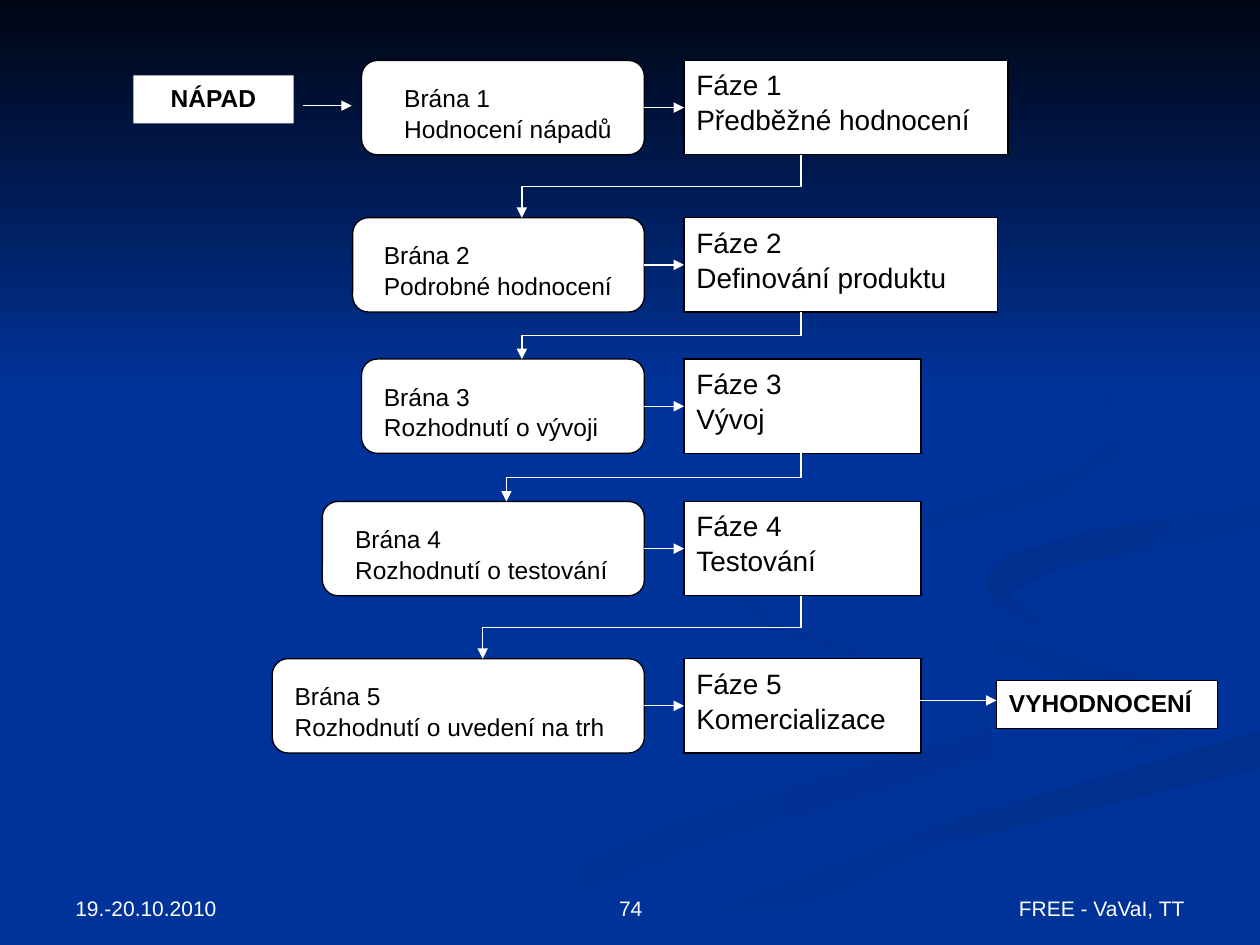
import pptx
import pptx.util
import pptx.dml.color
import pptx.enum.shapes
import pptx.enum.text
import pptx.oxml
import pptx.oxml.ns

Cm = pptx.util.Cm
Pt = pptx.util.Pt
SHAPES = pptx.enum.shapes.MSO_SHAPE
CONNECTORS = pptx.enum.shapes.MSO_CONNECTOR
ALIGN = pptx.enum.text.PP_ALIGN
ANCHOR = pptx.enum.text.MSO_ANCHOR

COLOURS = {
    "background": "003399", "night": "000514", "white": "FFFFFF", "black": "000000",
    "faint": "003193", "shade": "002F8C",
}

# Lengths are centimetres: row top, gate left, label left, phase width, entry x, gate, phase
STAGES = [
    (1.22, 7.29, 7.9, 6.53, None, "Hodnocení nápadů", "Předběžné hodnocení"),
    (4.39, 7.11, 7.49, 6.32, 10.52, "Podrobné hodnocení", "Definování produktu"),
    (7.24, 7.29, 7.49, 4.78, 10.52, "Rozhodnutí o vývoji", "Vývoj"),
    (10.11, 6.5, 6.91, 4.78, 10.21, "Rozhodnutí o testování", "Testování"),
    (13.28, 5.49, 5.69, 4.78, 9.73, "Rozhodnutí o uvedení na trh", "Komercializace"),
]
ROW_HEIGHT = 1.9
GATE_RIGHT = 12.99
LABEL_RIGHT = 12.83
PHASE_LEFT = 13.79
PHASE_EXIT = 16.15

FOOTER = [
    ("19.-20.10.2010", 1.27, 5.92, ALIGN.LEFT),
    ("74", 8.69, 8.05, ALIGN.CENTER),
    ("FREE - VaVaI, TT", 18.21, 5.92, ALIGN.RIGHT),
]

# Background ribbons: first colour, last colour, clockwise angle, outline on a 100 x 75 grid
GRID = Cm(0.254)
RIBBONS = [
    ("background", "faint", 0, [
        (57, 46), (60, 49), (78, 55), (78, 58), (54, 65), (30, 75), (36, 75),
        (56, 67), (79, 60), (78, 55), (61, 50)]),
    ("background", "faint", 45, [
        (72, 46), (75, 50), (92, 57), (89, 60), (94, 58), (92, 54), (75, 49)]),
    ("shade", "background", 90, [
        (50, 75), (57, 75), (75, 67), (100, 61), (100, 58), (76, 65), (57, 72)]),
    ("shade", "background", 45, [
        (78, 46), (79, 48), (83, 50), (80, 47), (84, 45), (100, 42), (100, 40),
        (87, 42), (80, 44)]),
    ("shade", "background", 45, [
        (68, 43), (83, 40), (89, 36), (88, 31), (76, 23), (85, 28), (89, 34), (86, 37),
        (76, 40), (60, 44), (58, 47), (62, 50), (59, 47), (62, 44)]),
    ("night", "background", 90, [(0, 0), (0, 30.8), (100, 30.8), (100, 0)]),
]


def rgb(name):
    return pptx.dml.color.RGBColor.from_string(COLOURS[name])


def write_text(frame, lines, size, colour="black", bold=False, align=ALIGN.LEFT,
               anchor=ANCHOR.TOP, spacing=1.04):
    frame.word_wrap = True
    frame.vertical_anchor = anchor
    for index, line in enumerate(lines):
        paragraph = frame.add_paragraph() if index else frame.paragraphs[0]
        paragraph.alignment = align
        paragraph.line_spacing = spacing
        run = paragraph.add_run()
        run.text = line
        run.font.name = "Arial"
        run.font.size = Pt(size)
        run.font.bold = bold
        run.font.color.rgb = rgb(colour)


def add_box(slide, left, top, width, height, kind=SHAPES.RECTANGLE, outlined=True):
    shape = slide.shapes.add_shape(kind, Cm(left), Cm(top), Cm(width), Cm(height))
    shape.shadow.inherit = False
    shape.fill.solid()
    shape.fill.fore_color.rgb = rgb("white")
    if outlined:
        shape.line.color.rgb = rgb("black")
        shape.line.width = Pt(0.75)
    else:
        shape.line.fill.background()
    return shape


def add_arrow(slide, x1, y1, x2, y2, kind=CONNECTORS.STRAIGHT):
    connector = slide.shapes.add_connector(kind, Cm(x1), Cm(y1), Cm(x2), Cm(y2))
    connector.line.color.rgb = rgb("white")
    connector.line.width = Pt(0.75)
    namespace = pptx.oxml.ns.nsdecls("a")
    connector.line._get_or_add_ln().append(
        pptx.oxml.parse_xml(f'<a:tailEnd {namespace} type="triangle"/>'))
    connector._element.spPr.append(pptx.oxml.parse_xml(f"<a:effectLst {namespace}/>"))
    return connector


def add_return_arrow(slide, x1, y1, x2, y2):
    """Elbow that leaves downwards: a sideways elbow turned a quarter about its centre."""
    middle_x, middle_y = (x1 + x2) / 2, (y1 + y2) / 2
    half_width, half_height = (y2 - y1) / 2, (x1 - x2) / 2
    connector = add_arrow(slide, middle_x - half_width, middle_y - half_height,
                          middle_x + half_width, middle_y + half_height, CONNECTORS.ELBOW)
    connector.rotation = 90


def add_ribbon(slide, first, last, angle, points):
    builder = slide.shapes.build_freeform(*points[0], scale=GRID)
    builder.add_line_segments(points[1:], close=True)
    shape = builder.convert_to_shape()
    shape.shadow.inherit = False
    shape.line.fill.background()
    shape.fill.gradient()
    shape.fill.gradient_angle = (360 - angle) % 360
    for stop, colour in zip(shape.fill.gradient_stops, (first, last)):
        stop.color.rgb = rgb(colour)


def add_stage(slide, number, top, gate_left, label_left, phase_width, gate, phase):
    add_box(slide, gate_left, top, GATE_RIGHT - gate_left, ROW_HEIGHT,
            SHAPES.ROUNDED_RECTANGLE)
    label = add_box(slide, label_left, top + 0.31, LABEL_RIGHT - label_left, 1.27,
                    outlined=False)
    write_text(label.text_frame, [f"Brána {number}", gate], 14)
    phase_box = add_box(slide, PHASE_LEFT, top, phase_width, ROW_HEIGHT)
    write_text(phase_box.text_frame, [f"Fáze {number}", phase], 16)
    middle = top + ROW_HEIGHT / 2
    add_arrow(slide, GATE_RIGHT, middle, PHASE_LEFT, middle)


def main():
    presentation = pptx.Presentation()
    presentation.slide_width, presentation.slide_height = Cm(25.4), Cm(19.05)
    slide = presentation.slides.add_slide(presentation.slide_layouts[6])
    slide.background.fill.solid()
    slide.background.fill.fore_color.rgb = rgb("background")

    for ribbon in RIBBONS:
        add_ribbon(slide, *ribbon)

    idea = add_box(slide, 2.69, 1.52, 3.23, 0.97, outlined=False)
    write_text(idea.text_frame, ["NÁPAD"], 14, bold=True, align=ALIGN.CENTER)
    previous_bottom = None
    for number, stage in enumerate(STAGES, start=1):
        top, gate_left, label_left, phase_width, entry, gate, phase = stage
        add_stage(slide, number, top, gate_left, label_left, phase_width, gate, phase)
        if entry:
            add_return_arrow(slide, PHASE_EXIT, previous_bottom, entry, top)
        previous_bottom = top + ROW_HEIGHT
    evaluation = add_box(slide, 20.09, 13.72, 4.45, 0.97)
    write_text(evaluation.text_frame, ["VYHODNOCENÍ"], 14, bold=True)
    add_arrow(slide, 18.49, 14.12, 20.09, 14.12)
    add_arrow(slide, 6.1, 2.13, 7.09, 2.13)

    for text, left, width, align in FOOTER:
        box = slide.shapes.add_textbox(Cm(left), Cm(17.36), Cm(width), Cm(1.32))
        write_text(box.text_frame, [text], 12, colour="white", align=align,
                   anchor=ANCHOR.BOTTOM, spacing=1)

    presentation.save("out.pptx")


if __name__ == "__main__":
    main()
